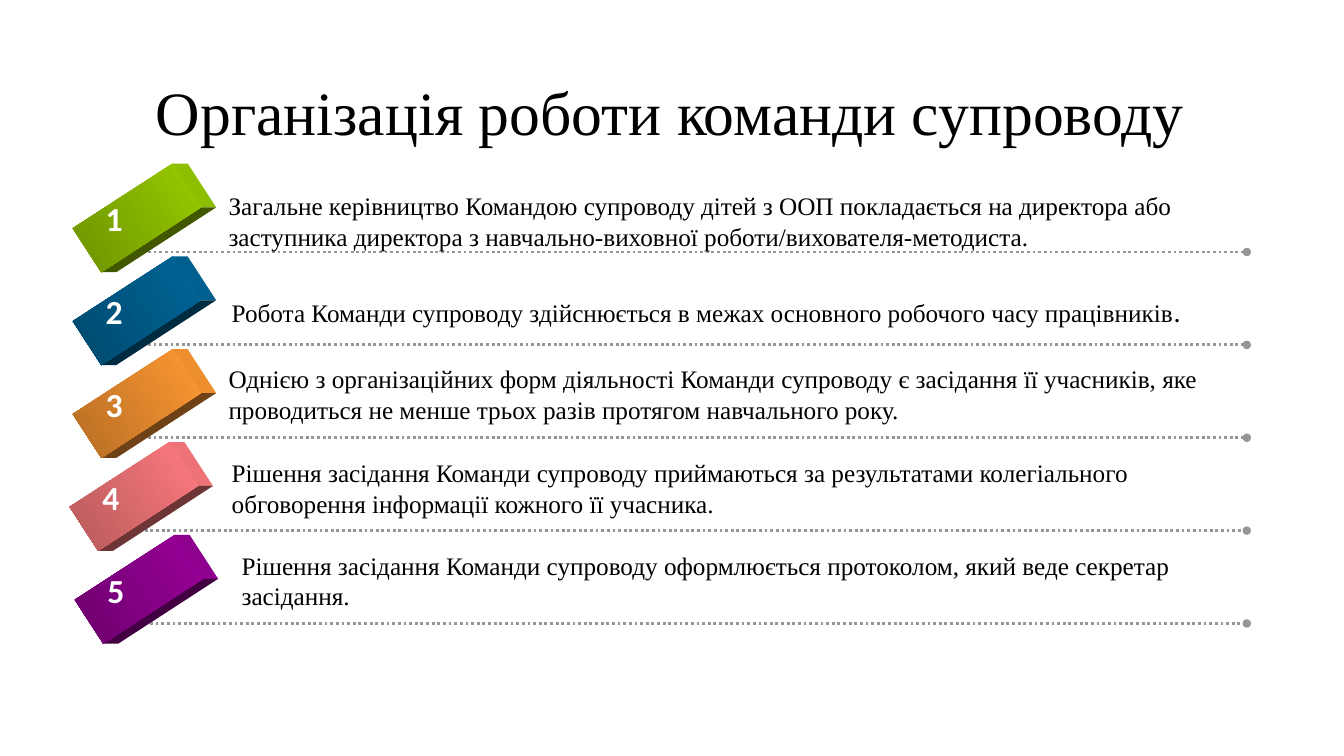
from dataclasses import dataclass
from math import cos, radians, sin

from lxml import etree
from pptx import Presentation
from pptx import util as u
from pptx.dml.color import RGBColor
from pptx.enum import dml, shapes, text
from pptx.oxml import ns

SERIF, SANS = "Times New Roman", "Calibri"
FIRST_LINE, PITCH = 6.35, 2.34
LINE_END = 31.42
BLOCK_LEFT, BLOCK_WIDTH, BLOCK_HEIGHT, BLOCK_RISE = 2.79, 1.32, 3.0, 2.36
BLOCK_TURN = 57
DEPTH = 0.38


@dataclass
class Step:
    wording: str
    color: str
    left: float
    top: float
    width: float
    shift: float = 0.0
    ending: str = ""


STEPS = [
    Step("Загальне керівництво Командою супроводу дітей з ООП покладається на директора або "
         "заступника директора з навчально-виховної роботи/вихователя-методиста.",
         "99CC00", 5.51, 4.65, 25.93),
    Step("Робота Команди супроводу здійснюється в межах основного робочого часу працівників",
         "006699", 5.59, 7.37, 25.91, ending="."),
    Step("Однією з організаційних форм діяльності Команди супроводу є засідання її учасників, "
         "яке проводиться не менше трьох разів протягом навчального року.",
         "FF9933", 5.51, 9.02, 25.55),
    Step("Рішення засідання Команди супроводу приймаються за результатами колегіального "
         "обговорення інформації кожного її учасника.",
         "FF7C80", 5.59, 11.38, 25.73, shift=-0.08),
    Step("Рішення засідання Команди супроводу оформлюється протоколом, який веде секретар "
         "засідання.",
         "990099", 5.84, 13.72, 25.5, shift=0.05),
]


def rgb(color: str, shade: float = 1.0) -> RGBColor:
    """Colour from a hex string, darkened by the given factor."""
    return RGBColor(*(round(part * shade) for part in RGBColor.from_string(color)))


def style(span, font: str, size: float, color: str, bold: bool = False) -> None:
    span.font.name = font
    span.font.size = u.Pt(size)
    span.font.color.rgb = rgb(color)
    span.font.bold = bold


def add_text(page, wording: str, left: float, top: float, width: float, height: float,
             font: str, size: float, color: str = "000000", bold: bool = False):
    box = page.shapes.add_textbox(u.Cm(left), u.Cm(top), u.Cm(width), u.Cm(height))
    box.text_frame.word_wrap = True
    box.text_frame.text = wording
    para = box.text_frame.paragraphs[0]
    style(para.runs[0], font, size, color, bold)
    return box, para


def add_dotted_line(page, left: float, y: float) -> None:
    line = page.shapes.add_connector(shapes.MSO_CONNECTOR.STRAIGHT,
                                     u.Cm(left), u.Cm(y), u.Cm(LINE_END), u.Cm(y))
    line.line.color.rgb = rgb("969696")
    line.line.width = u.Pt(2)
    line.line.dash_style = dml.MSO_LINE.ROUND_DOT
    etree.SubElement(line.line._get_or_add_ln(), ns.qn("a:tailEnd"), type="oval")
    etree.SubElement(line._element.spPr, ns.qn("a:effectLst"))


def add_side(page, start: tuple, end: tuple, color: RGBColor) -> None:
    """Side face between one edge of the front and the same edge set back by DEPTH."""
    corners = [start, end, (end[0] + DEPTH, end[1]), (start[0] + DEPTH, start[1])]
    points = [(u.Cm(x), u.Cm(y)) for x, y in corners]
    builder = page.shapes.build_freeform(*points[0], scale=1.0)
    builder.add_line_segments(points[1:], close=True)
    side = builder.convert_to_shape()
    side.shadow.inherit = False
    side.fill.solid()
    side.fill.fore_color.rgb = color
    side.line.fill.background()


def add_block(page, left: float, top: float, color: str) -> None:
    turn = radians(BLOCK_TURN)
    center_x, center_y = left + BLOCK_WIDTH / 2, top + BLOCK_HEIGHT / 2

    def corner(across: int, down: int) -> tuple:
        x, y = across * BLOCK_WIDTH / 2, down * BLOCK_HEIGHT / 2
        return (center_x + x * cos(turn) - y * sin(turn),
                center_y + x * sin(turn) + y * cos(turn))

    add_side(page, corner(-1, -1), corner(1, -1), rgb(color, 0.93))
    add_side(page, corner(1, -1), corner(1, 1), rgb(color, 0.43))

    front = page.shapes.add_shape(shapes.MSO_SHAPE.RECTANGLE, u.Cm(left), u.Cm(top),
                                  u.Cm(BLOCK_WIDTH), u.Cm(BLOCK_HEIGHT))
    front.rotation = BLOCK_TURN
    front.shadow.inherit = False
    front.line.fill.background()
    front.fill.gradient()
    front.fill.gradient_angle = 270
    for stop, shade in zip(front.fill.gradient_stops, (1.0, 0.714)):
        stop.color.rgb = rgb(color, shade)


def add_step(page, index: int, step: Step) -> None:
    line_y = FIRST_LINE + index * PITCH
    left = BLOCK_LEFT + step.shift
    add_dotted_line(page, left + 0.94, line_y)
    add_block(page, left, line_y - BLOCK_RISE, step.color)
    add_text(page, str(index + 1), left - 0.38, line_y - 1.48, 2.03, 1.27,
             SANS, 24, "FFFFFF", bold=True)
    height = 1.12 if step.ending else 1.8
    _, para = add_text(page, step.wording, step.left, step.top, step.width, height, SERIF, 18)
    para.line_spacing = u.Pt(22)
    if step.ending:
        span = para.add_run()
        span.text = step.ending
        style(span, SANS, 20, "000000")


def main() -> None:
    deck = Presentation()
    deck.slide_width, deck.slide_height = u.Cm(33.87), u.Cm(19.05)
    page = deck.slides.add_slide(deck.slide_layouts[6])
    title, para = add_text(page, "Організація роботи команди супроводу",
                           2.29, 1.7, 29.21, 2.41, SERIF, 44)
    title.text_frame.vertical_anchor = text.MSO_ANCHOR.MIDDLE
    para.alignment = text.PP_ALIGN.CENTER
    para.line_spacing = 0.9
    for index, step in enumerate(STEPS):
        add_step(page, index, step)
    deck.save("out.pptx")


if __name__ == "__main__":
    main()
